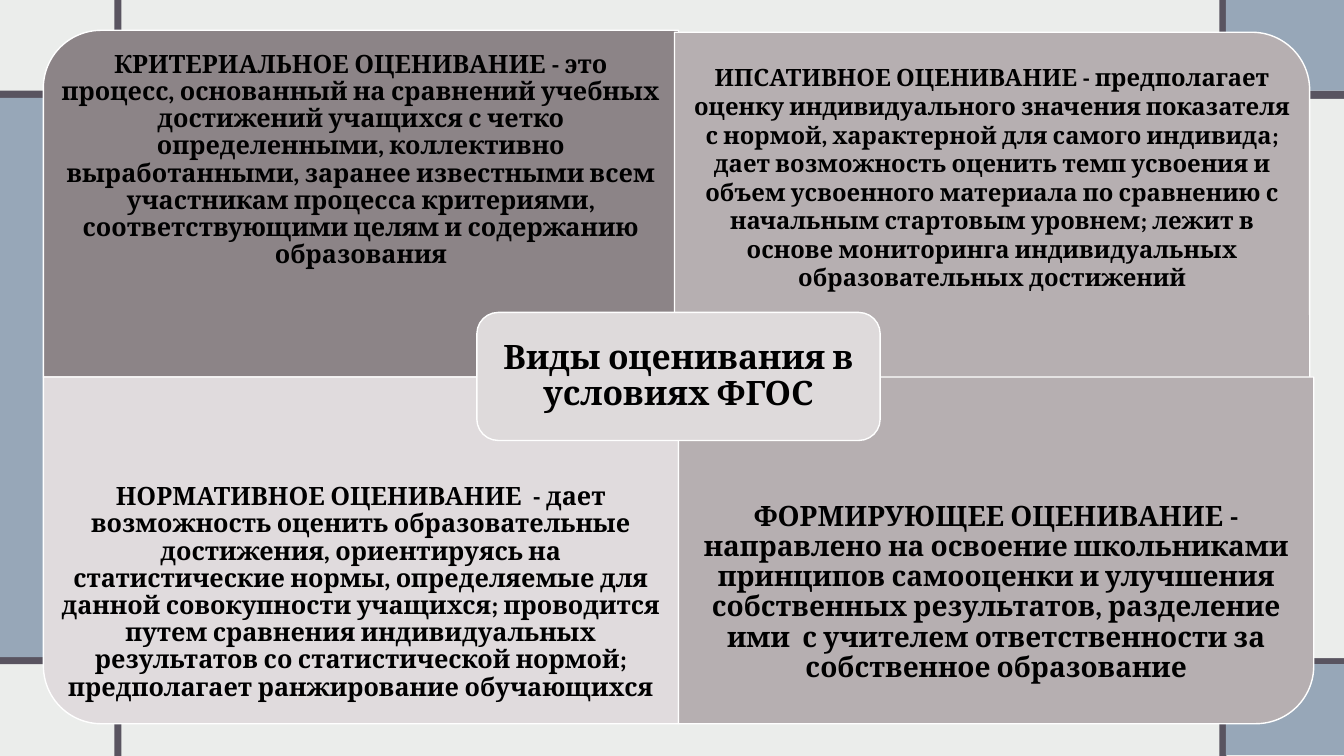
from dataclasses import dataclass

from pptx import Presentation
from pptx.dml.color import RGBColor
from pptx.enum.shapes import MSO_SHAPE
from pptx.enum.text import MSO_ANCHOR, PP_ALIGN
from pptx.slide import Slide
from pptx.util import Inches, Pt

RECTANGLE = MSO_SHAPE.RECTANGLE
ROUNDED = MSO_SHAPE.ROUNDED_RECTANGLE
ONE_ROUND_CORNER = MSO_SHAPE.ROUND_1_RECTANGLE
CENTER = PP_ALIGN.CENTER
MIDDLE = MSO_ANCHOR.MIDDLE

PAPER = RGBColor(0xEB, 0xED, 0xEB)
PLUM = RGBColor(0x59, 0x54, 0x60)
BLUE = RGBColor(0x97, 0xA7, 0xB8)
DARK_GRAY = RGBColor(0x8C, 0x84, 0x87)
MID_GRAY = RGBColor(0xB6, 0xAF, 0xB1)
LIGHT_GRAY = RGBColor(0xE0, 0xDB, 0xDD)
CENTER_GRAY = RGBColor(0xDE, 0xDA, 0xDB)
WHITE = RGBColor(0xFF, 0xFF, 0xFF)
BLACK = RGBColor(0x00, 0x00, 0x00)

PAGE_WIDTH, PAGE_HEIGHT = 13.33, 7.5
PANEL_WIDTH, PANEL_HEIGHT = 6.3, 3.44
TEXT_HEIGHT = 2.58
SIDE_WIDTH = 1.17
BAR_WIDTH = 0.07

CRITERIA = (
    "КРИТЕРИАЛЬНОЕ ОЦЕНИВАНИЕ - это процесс, основанный на сравнений учебных "
    "достижений учащихся с четко определенными, коллективно выработанными, "
    "заранее известными всем участникам процесса критериями, "
    "соответствующими целям и содержанию образования"
)
IPSATIVE = (
    "ИПСАТИВНОЕ ОЦЕНИВАНИЕ - предполагает оценку индивидуального значения "
    "показателя с нормой, характерной для самого индивида; дает возможность "
    "оценить темп усвоения и объем усвоенного материала по сравнению с "
    "начальным стартовым уровнем; лежит в основе мониторинга индивидуальных "
    "образовательных достижений"
)
NORMATIVE = (
    "НОРМАТИВНОЕ ОЦЕНИВАНИЕ  - дает возможность оценить образовательные "
    "достижения, ориентируясь на статистические нормы, определяемые для "
    "данной совокупности учащихся; проводится путем сравнения индивидуальных "
    "результатов со статистической нормой; предполагает ранжирование обучающихся"
)
FORMATIVE = (
    "ФОРМИРУЮЩЕЕ ОЦЕНИВАНИЕ - направлено на освоение школьниками принципов "
    "самооценки и улучшения собственных результатов, разделение ими  с учителем "
    "ответственности за собственное образование"
)


def write(shape, text, size, inset, spacing=0.9, font="Cambria", color=BLACK):
    frame = shape.text_frame
    frame.word_wrap = True
    frame.vertical_anchor = MIDDLE
    frame.margin_left = frame.margin_right = Inches(inset)
    frame.margin_top = frame.margin_bottom = Inches(inset)
    para = frame.paragraphs[0]
    para.alignment = CENTER
    para.line_spacing = spacing
    span = para.add_run()
    span.text = text
    span.font.name = font
    span.font.size = Pt(size)
    span.font.bold = True
    span.font.color.rgb = color


@dataclass
class Page:
    slide: Slide
    outline: RGBColor = WHITE
    outline_width: float = 1

    def block(self, left, top, width, height, fill, kind=RECTANGLE, outlined=False):
        shape = self.slide.shapes.add_shape(
            kind, Inches(left), Inches(top), Inches(width), Inches(height)
        )
        shape.shadow.inherit = False
        shape.fill.solid()
        shape.fill.fore_color.rgb = fill
        if outlined:
            shape.line.color.rgb = self.outline
            shape.line.width = Pt(self.outline_width)
        else:
            shape.line.fill.background()
        return shape

    def panel(self, left, top, rotation, fill):
        width, height = PANEL_WIDTH, PANEL_HEIGHT
        if rotation % 180:
            width, height = height, width
            left += (PANEL_WIDTH - width) / 2
            top += (PANEL_HEIGHT - height) / 2
        shape = self.block(left, top, width, height, fill, ONE_ROUND_CORNER, True)
        shape.rotation = rotation

    def caption(self, left, top, text, **style):
        box = self.slide.shapes.add_textbox(
            Inches(left), Inches(top), Inches(PANEL_WIDTH), Inches(TEXT_HEIGHT)
        )
        write(box, text, **style)


def main():
    deck = Presentation()
    deck.slide_width = Inches(PAGE_WIDTH)
    deck.slide_height = Inches(PAGE_HEIGHT)
    slide = deck.slides.add_slide(deck.slide_layouts[6])
    slide.background.fill.solid()
    slide.background.fill.fore_color.rgb = PAPER
    page = Page(slide)

    right_side = PAGE_WIDTH - SIDE_WIDTH
    page.block(0, 0.9, PAGE_WIDTH, 5.69, PLUM)
    page.block(0, 0.97, SIDE_WIDTH, 5.55, BLUE)
    for center in (SIDE_WIDTH, right_side - 0.03):
        page.block(center - BAR_WIDTH / 2, 0, BAR_WIDTH, PAGE_HEIGHT, PLUM)
    page.block(right_side, 0.98, SIDE_WIDTH, 5.55, PAPER)
    for top in (0, 6.59):
        page.block(right_side, top, SIDE_WIDTH, 0.9, BLUE)

    panels = (
        (0.43, 0.3, 270, DARK_GRAY, 0.3, CRITERIA, 18, 0.14, 0.9),
        (6.69, 0.32, 0, MID_GRAY, 0.47, IPSATIVE, 17, 0.13, 1.0),
        (0.43, 3.74, 180, LIGHT_GRAY, 4.59, NORMATIVE, 18, 0.14, 0.9),
        (6.73, 3.74, 90, MID_GRAY, 4.59, FORMATIVE, 20, 0.16, 0.9),
    )
    for left, top, rotation, fill, text_top, text, size, inset, spacing in panels:
        page.panel(left, top, rotation, fill)
        page.caption(left, text_top, text, size=size, inset=inset, spacing=spacing)

    title = page.block(4.73, 3.1, 4, 1.27, CENTER_GRAY, ROUNDED, True)
    write(title, "Виды оценивания в условиях ФГОС", size=24, inset=0.1)

    deck.save("out.pptx")


if __name__ == "__main__":
    main()
